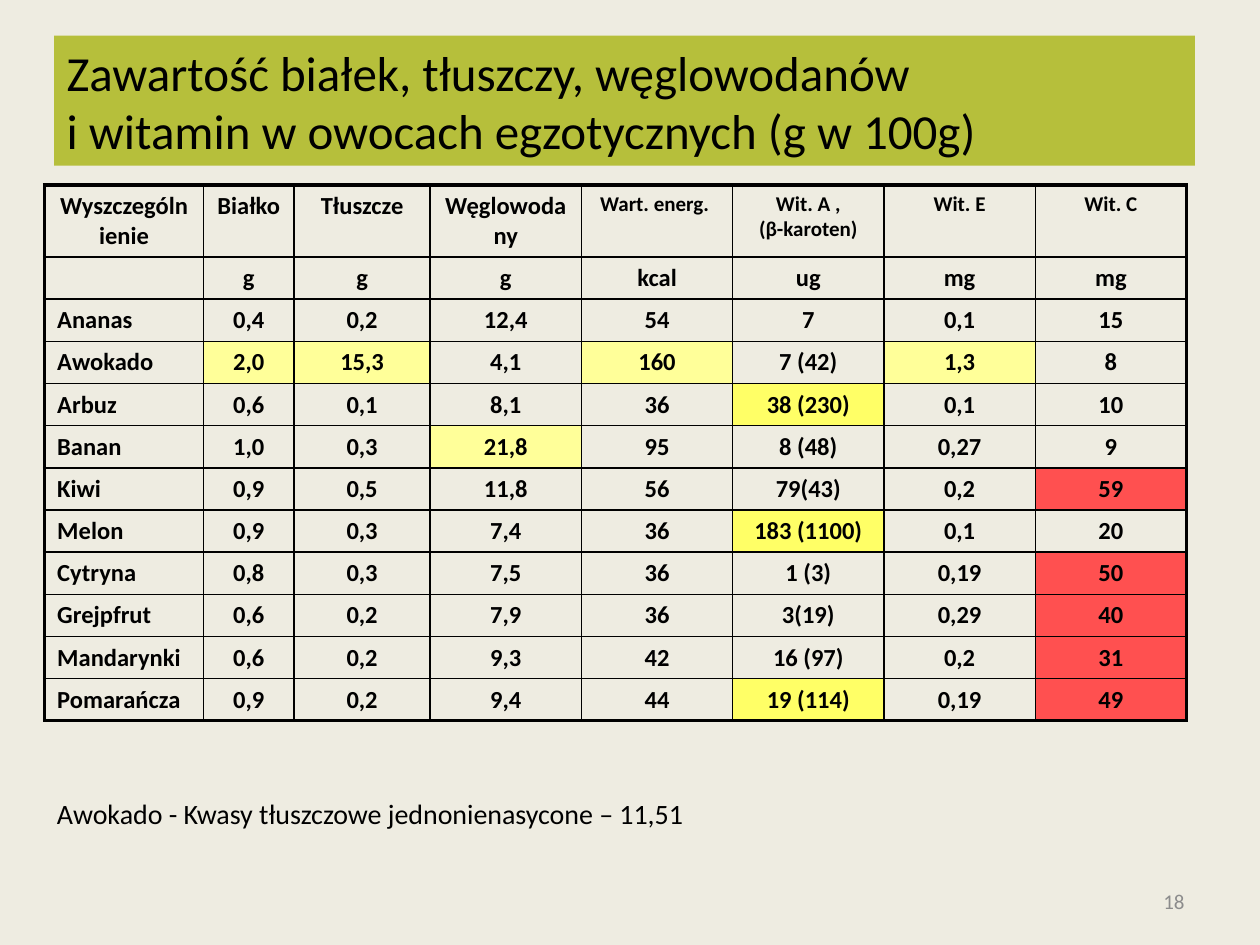
"""Builds a slide on the nutrients of exotic fruit."""
import lxml.etree
import pptx
import pptx.dml.color
import pptx.enum.text
import pptx.oxml.ns
import pptx.util

Cm, Pt = pptx.util.Cm, pptx.util.Pt
Align = pptx.enum.text.PP_ALIGN
Anchor = pptx.enum.text.MSO_ANCHOR
Size = pptx.enum.text.MSO_AUTO_SIZE

HEADS = ["Wyszczególnienie", "Białko", "Tłuszcze", "Węglowodany",
         "Wart. energ. ", "Wit. A ,\n(β-karoten)", "Wit. E", "Wit. C"]
ROWS = [
    HEADS,
    ["", "g", "g", "g", "kcal", "ug", "mg", "mg"],
    ["Ananas", "0,4", "0,2", "12,4", "54", "7", "0,1", "15"],
    ["Awokado", "2,0", "15,3", "4,1", "160", "7 (42)", "1,3", "8"],
    ["Arbuz", "0,6", "0,1", "8,1", "36", "38 (230)", "0,1", "10"],
    ["Banan", "1,0", "0,3", "21,8", "95", "8 (48)", "0,27", "9"],
    ["Kiwi", "0,9", "0,5", "11,8", "56", "79(43)", "0,2", "59"],
    ["Melon", "0,9", "0,3", "7,4", "36", "183 (1100)", "0,1", "20"],
    ["Cytryna", "0,8", "0,3", "7,5", "36", "1 (3)", "0,19", "50"],
    ["Grejpfrut", "0,6", "0,2", "7,9", "36", "3(19)", "0,29", "40"],
    ["Mandarynki", "0,6", "0,2", "9,3", "42", "16 (97)", "0,2", "31"],
    ["Pomarańcza", "0,9", "0,2", "9,4", "44", "19 (114)", "0,19", "49"],
]
WIDTHS = [3.2, 1.83, 2.74] + [3.05] * 5
HEIGHTS = [1.45] + [0.85] * 11
MARKS = {
    "FFFF99": [(3, 1), (3, 2), (3, 4), (3, 6), (5, 3)],
    "FFFF66": [(4, 5), (7, 5), (11, 5)],
    "FF5050": [(6, 7), (8, 7), (9, 7), (10, 7), (11, 7)],
}
TINTS = {spot: tint for tint, spots in MARKS.items() for spot in spots}


def color(code):
    """Turn a hex string into a colour."""
    return pptx.dml.color.RGBColor.from_string(code)


class Deck:
    """Holds the style and the current slide."""
    face, ink, paper = "Calibri", "000000", "EEECE1"
    thin, thick = 1, 2.25

    def __init__(self):
        """Open a deck with one title-only slide."""
        self.show = pptx.Presentation()
        self.show.slide_width, self.show.slide_height = Cm(25.4), Cm(19.05)
        self.slide = self.show.slides.add_slide(self.show.slide_layouts[5])
        self.paint(self.slide.background.fill, self.paper)

    def paint(self, fill, code):
        """Give a fill one solid colour."""
        fill.solid()
        fill.fore_color.rgb = color(code)

    def style(self, frame, size, align=Align.LEFT, bold=False, ink=None):
        """Format every paragraph of a text frame."""
        for para in frame.paragraphs:
            para.alignment = align
            font = para.font
            font.name, font.size, font.bold = self.face, Pt(size), bold
            font.color.rgb = color(ink or self.ink)

    def title(self, text, box, size, tint):
        """Place the title on a coloured band."""
        shape = self.slide.shapes.title
        shape.left, shape.top, shape.width, shape.height = map(Cm, box)
        self.paint(shape.fill, tint)
        frame = shape.text_frame
        frame.text = text
        frame.vertical_anchor = Anchor.TOP
        frame.auto_size = Size.SHAPE_TO_FIT_TEXT
        self.style(frame, size)

    def label(self, text, box, size, anchor=Anchor.TOP, **look):
        """Add a text box."""
        frame = self.slide.shapes.add_textbox(*map(Cm, box)).text_frame
        frame.word_wrap = True
        frame.vertical_anchor = anchor
        frame.text = text
        self.style(frame, size, **look)

    def border(self, cell, sides):
        """Draw the cell's edges, given as side and points."""
        props = cell._tc.get_or_add_tcPr()
        name = pptx.oxml.ns.qn
        for side, width in sides.items():
            line = lxml.etree.SubElement(props, name("a:ln" + side), w=str(Pt(width)))
            fill = lxml.etree.SubElement(line, name("a:solidFill"))
            lxml.etree.SubElement(fill, name("a:srgbClr"), val=self.ink)

    def table(self, rows, spot, widths, heights, tints):
        """Add a table with a thick outer frame."""
        count, span = len(rows), len(widths)
        box = (*spot, sum(widths), sum(heights))
        grid = self.slide.shapes.add_table(count, span, *map(Cm, box)).table
        grid.first_row = grid.horz_banding = False
        for column, width in zip(grid.columns, widths):
            column.width = Cm(width)
        for line, height in zip(grid.rows, heights):
            line.height = Cm(height)
        for r, row in enumerate(rows):
            for c, text in enumerate(row):
                cell = grid.cell(r, c)
                cell.text = text
                size = 12 if r == 0 and c > 3 else 14
                left = c == 0 and r > 1
                self.style(cell.text_frame, size,
                           Align.LEFT if left else Align.CENTER, True)
                outer = {"L": c == 0, "R": c == span - 1,
                         "T": r == 0, "B": r == count - 1}
                self.border(cell, {side: self.thick if edge else self.thin
                                   for side, edge in outer.items()})
                if (r, c) in tints:
                    self.paint(cell.fill, tints[r, c])
                else:
                    cell.fill.background()


def main():
    """Build and save the slide."""
    deck = Deck()
    deck.title("Zawartość białek, tłuszczy, węglowodanów \v"
               "i witamin w owocach egzotycznych (g w 100g)",
               (1.09, 0.72, 23, 2.62), 28, "B6BF3B")
    deck.table(ROWS, (0.9, 3.73), WIDTHS, HEIGHTS, TINTS)
    deck.label("Awokado - Kwasy tłuszczowe jednonienasycone – 11,51",
               (0.9, 15.93, 13.8, 0.94), 16)
    deck.label("18", (18.2, 17.66, 5.93, 1.01), 12, Anchor.MIDDLE,
               align=Align.RIGHT, ink="8C8C8C")
    deck.show.save("out.pptx")


if __name__ == "__main__":
    main()
